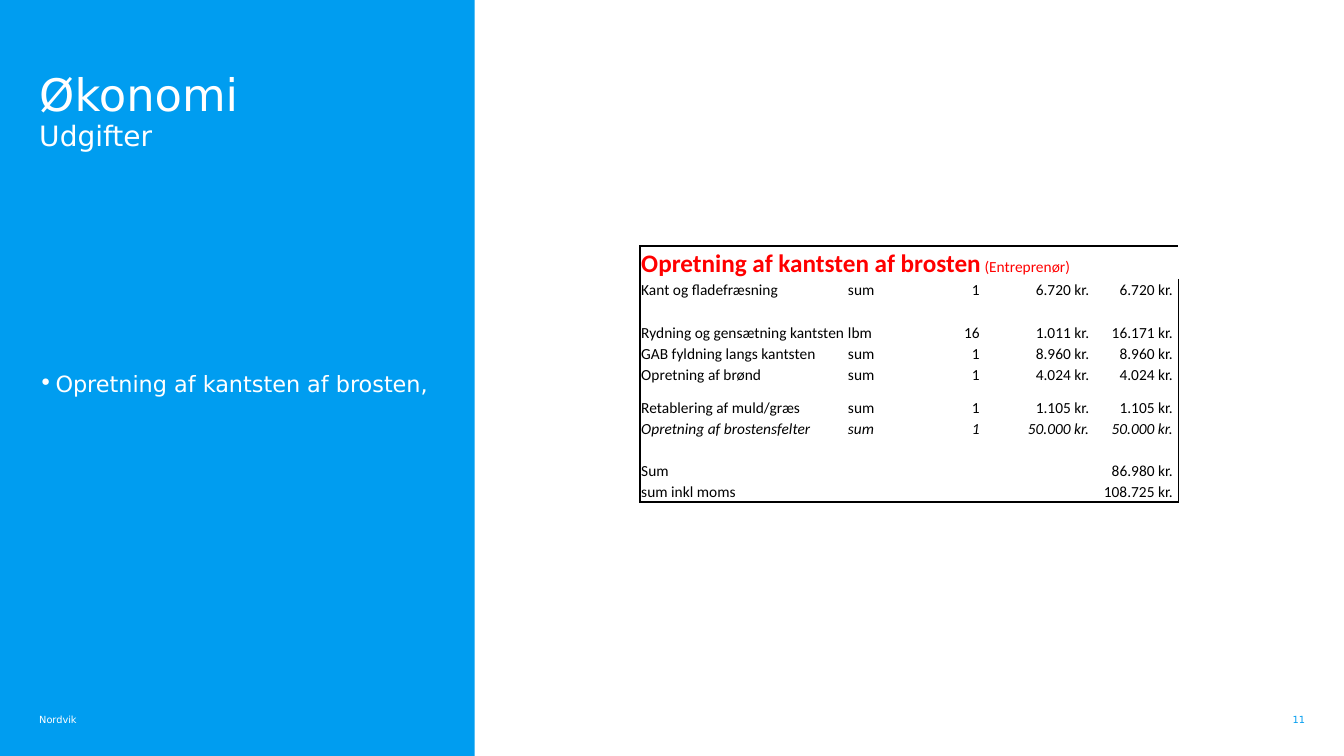
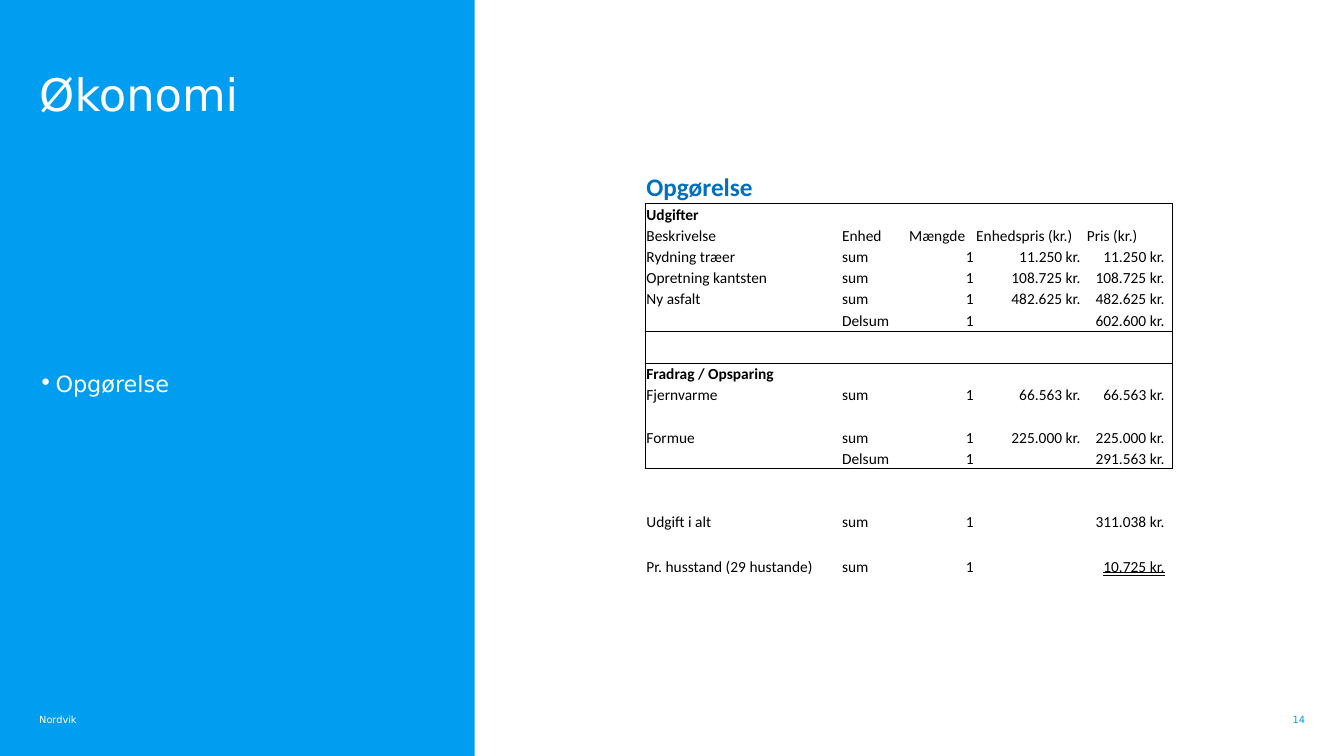
from dataclasses import dataclass

from lxml import etree
from pptx import Presentation
from pptx.dml.color import RGBColor
from pptx.enum.shapes import MSO_SHAPE
from pptx.enum.text import MSO_ANCHOR, MSO_UNDERLINE, PP_ALIGN
from pptx.oxml.ns import qn
from pptx.slide import Slide
from pptx.table import _Cell
from pptx.text.text import _Paragraph
from pptx.util import Cm, Pt

BLUE = RGBColor(0x00, 0x9D, 0xF0)
NAVY = RGBColor(0x00, 0x70, 0xC0)
RED = RGBColor(0xFF, 0x00, 0x00)
WHITE = RGBColor(0xFF, 0xFF, 0xFF)
BLACK = RGBColor(0x00, 0x00, 0x00)

RECT = MSO_SHAPE.RECTANGLE
TOP, BOTTOM = MSO_ANCHOR.TOP, MSO_ANCHOR.BOTTOM
LEFT, RIGHT = PP_ALIGN.LEFT, PP_ALIGN.RIGHT
DOUBLE = MSO_UNDERLINE.DOUBLE_LINE

SANS, CELL_FONT = "DejaVu Sans", "Calibri"
CELL_SIZE = 11
EDGE = 0.99
WIDTH = 9.96
INDENT = Cm(0.41)
PAD = 0.03
TAIL = (1.69, 1.69, 2.79, 2.18)
UNIT_COL, PRICE_COL = 3, 4


@dataclass(frozen=True)
class Row:
    cells: tuple[str, ...] = ()
    height: float = 0.53
    bold: bool = False
    italic: bool = False
    header: bool = False
    total: bool = False


@dataclass(frozen=True)
class Grid:
    """A price table; frames are the first and last row of each outlined part."""
    left: float
    top: float
    first: float
    title: str
    note: str
    color: RGBColor
    line: float
    pads: dict[int, float]
    frames: tuple[tuple[int, int], ...]
    rows: tuple[Row, ...]


@dataclass(frozen=True)
class Page:
    number: int
    subtitle: str
    bullet: str
    grid: Grid


COSTS = Grid(
    16.13, 6.2, 5.21, "Opretning af kantsten af brosten", " (Entreprenør)", RED, 1,
    {UNIT_COL: 0.06, PRICE_COL: 0.13}, ((0, 9),),
    (
        Row(("Kant og fladefræsning", "sum", "1", "6.720 kr.", "6.720 kr.")),
        Row(("Rydning og gensætning kantsten", "lbm", "16", "1.011 kr.", "16.171 kr."), 1.08),
        Row(("GAB fyldning langs kantsten", "sum", "1", "8.960 kr.", "8.960 kr.")),
        Row(("Opretning af brønd", "sum", "1", "4.024 kr.", "4.024 kr.")),
        Row(("Retablering af muld/græs", "sum", "1", "1.105 kr.", "1.105 kr."), 0.83),
        Row(("Opretning af brostensfelter", "sum", "1", "50.000 kr.", "50.000 kr."), italic=True),
        Row(),
        Row(("Sum", "", "", "", "86.980 kr.")),
        Row(("sum inkl moms", "", "", "", "108.725 kr.")),
    ),
)

BALANCE = Grid(
    16.26, 4.29, 4.93, "Opgørelse", "", NAVY, 0.5,
    {UNIT_COL: 0.13, PRICE_COL: 0.19}, ((1, 6), (7, 7), (8, 11)),
    (
        Row(("Udgifter",), bold=True),
        Row(("Beskrivelse", "Enhed", "Mængde", "Enhedspris (kr.)", "Pris (kr.)"), header=True),
        Row(("Rydning træer", "sum", "1", "11.250 kr.", "11.250 kr.")),
        Row(("Opretning kantsten", "sum", "1", "108.725 kr.", "108.725 kr."), 0.55),
        Row(("Ny asfalt", "sum", "1", "482.625 kr.", "482.625 kr.")),
        Row(("", "Delsum", "1", "", "602.600 kr."), 0.55),
        Row(height=0.81),
        Row(("Fradrag / Opsparing",), bold=True),
        Row(("Fjernvarme", "sum", "1", "66.563 kr.", "66.563 kr.")),
        Row(("Formue", "sum", "1", "225.000 kr.", "225.000 kr."), 1.06),
        Row(("", "Delsum", "1", "", "291.563 kr.")),
        Row(),
        Row(),
        Row(("Udgift i alt", "sum", "1", "", "311.038 kr.")),
        Row(),
        Row(("Pr. husstand (29 hustande)", "sum", "1", "", "10.725 kr."), 0.61, total=True),
    ),
)

PAGES = (
    Page(11, "Udgifter", "Opretning af kantsten af brosten,", COSTS),
    Page(14, "", "Opgørelse", BALANCE),
)


def write(para: _Paragraph, text: str, *, size: float, color: RGBColor = WHITE,
          font: str = SANS, bold: bool = False, italic: bool = False,
          under: MSO_UNDERLINE | None = None) -> None:
    run = para.add_run()
    run.text = text
    style = run.font
    style.size, style.name = Pt(size), font
    style.bold, style.italic, style.underline = bold, italic, under
    style.color.rgb = color


def add_box(slide: Slide, left: float, top: float, width: float, height: float,
            anchor: MSO_ANCHOR = TOP, align: PP_ALIGN = LEFT) -> _Paragraph:
    """Add a text box without margins and return its paragraph."""
    frame = slide.shapes.add_textbox(Cm(left), Cm(top), Cm(width), Cm(height)).text_frame
    frame.word_wrap = True
    frame.vertical_anchor = anchor
    frame.margin_left = frame.margin_right = frame.margin_top = frame.margin_bottom = 0
    para = frame.paragraphs[0]
    para.alignment = align
    return para


def add_bullet(para: _Paragraph) -> None:
    props = para._p.get_or_add_pPr()
    props.set("marL", str(INDENT))
    props.set("indent", str(-INDENT))
    etree.SubElement(props, qn("a:buFont")).set("typeface", SANS)
    etree.SubElement(props, qn("a:buChar")).set("char", "•")


def add_tab(para: _Paragraph, place: float) -> None:
    """Set one right tab stop."""
    stops = etree.SubElement(para._p.get_or_add_pPr(), qn("a:tabLst"))
    tab = etree.SubElement(stops, qn("a:tab"))
    tab.set("pos", str(Cm(place)))
    tab.set("algn", "r")


def set_edges(cell: _Cell, sides: dict[str, bool], width: float) -> None:
    props = cell._tc.get_or_add_tcPr()
    for side, shown in sides.items():
        line = etree.SubElement(props, qn(f"a:ln{side}"))
        line.set("w", str(Pt(width)))
        if shown:
            fill = etree.SubElement(line, qn("a:solidFill"))
            etree.SubElement(fill, qn("a:srgbClr")).set("val", str(BLACK))
        else:
            etree.SubElement(line, qn("a:noFill"))


def fill_cell(cell: _Cell, row: Row, col: int, grid: Grid) -> None:
    para = cell.text_frame.paragraphs[0]
    text = row.cells[col] if col < len(row.cells) else ""
    if not text:
        etree.SubElement(para._p, qn("a:endParaRPr")).set("sz", str(CELL_SIZE * 100))
        return
    under = None
    pad = grid.pads.get(col, PAD)
    if row.total and col == PRICE_COL:
        add_tab(para, TAIL[-1] - PAD - pad)
        text, under = "\t" + text, DOUBLE
    elif col >= 2 and not row.header:
        para.alignment = RIGHT
        cell.margin_right = Cm(pad)
    write(para, text, size=CELL_SIZE, color=BLACK, font=CELL_FONT,
          bold=row.bold, italic=row.italic, under=under)


def add_grid(slide: Slide, grid: Grid) -> None:
    widths = (grid.first, *TAIL)
    rows = (Row(height=0.83), *grid.rows)
    table = slide.shapes.add_table(
        len(rows), len(widths), Cm(grid.left), Cm(grid.top),
        Cm(sum(widths)), Cm(sum(row.height for row in rows))).table
    table.first_row = table.horz_banding = False
    for col, width in enumerate(widths):
        table.columns[col].width = Cm(width)

    lines = {first for first, _ in grid.frames} | {last + 1 for _, last in grid.frames}
    for index, row in enumerate(rows):
        table.rows[index].height = Cm(row.height)
        framed = any(first <= index <= last for first, last in grid.frames)
        for col in range(len(widths)):
            cell = table.cell(index, col)
            set_edges(cell, {
                "L": framed and col == 0,
                "R": framed and col == len(widths) - 1,
                "T": index in lines,
                "B": index + 1 in lines,
            }, grid.line)
            cell.fill.background()
            cell.vertical_anchor = BOTTOM
            cell.margin_left = cell.margin_right = cell.margin_top = Cm(PAD)
            cell.margin_bottom = 0
            if index or col:
                fill_cell(cell, row, col, grid)

    head = table.cell(0, 0)
    para = head.text_frame.paragraphs[0]
    write(para, grid.title, size=18, color=grid.color, font=CELL_FONT, bold=True)
    if grid.note:
        write(para, grid.note, size=CELL_SIZE, color=grid.color, font=CELL_FONT)
        head.merge(table.cell(0, len(widths) - 1))


def add_page(slide: Slide, page: Page) -> None:
    panel = slide.shapes.add_shape(RECT, 0, 0, Cm(11.96), Cm(19.05))
    panel.shadow.inherit = False
    panel.fill.solid()
    panel.fill.fore_color.rgb = BLUE
    panel.line.fill.background()

    write(add_box(slide, EDGE, 17.68, 2.16, 0.61, BOTTOM), "Nordvik", size=7)

    title = add_box(slide, EDGE, 1.83, WIDTH, 3.28)
    title.line_spacing = 0.91
    write(title, "Økonomi", size=32)
    if page.subtitle:
        title.add_line_break()
        write(title, page.subtitle, size=20)

    body = add_box(slide, EDGE, 9.32, WIDTH, 7.7)
    add_bullet(body)
    body.space_after = Pt(6)
    write(body, page.bullet, size=16)

    number = add_box(slide, 31.14, 17.98, 1.75, 0.3, BOTTOM, RIGHT)
    write(number, str(page.number), size=7, color=BLUE)
    add_grid(slide, page.grid)


def main() -> None:
    deck = Presentation()
    deck.slide_width, deck.slide_height = Cm(33.87), Cm(19.05)
    for page in PAGES:
        add_page(deck.slides.add_slide(deck.slide_layouts[6]), page)
    deck.save("out.pptx")


if __name__ == "__main__":
    main()
